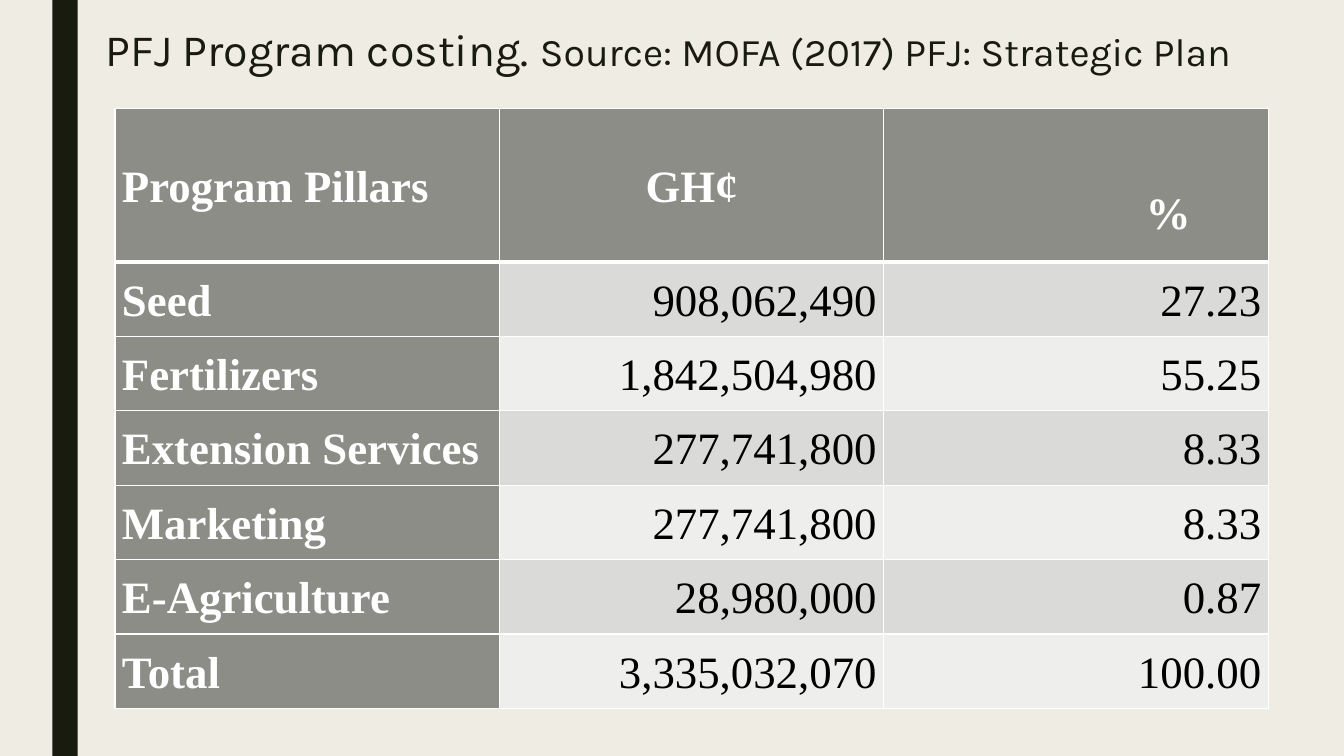
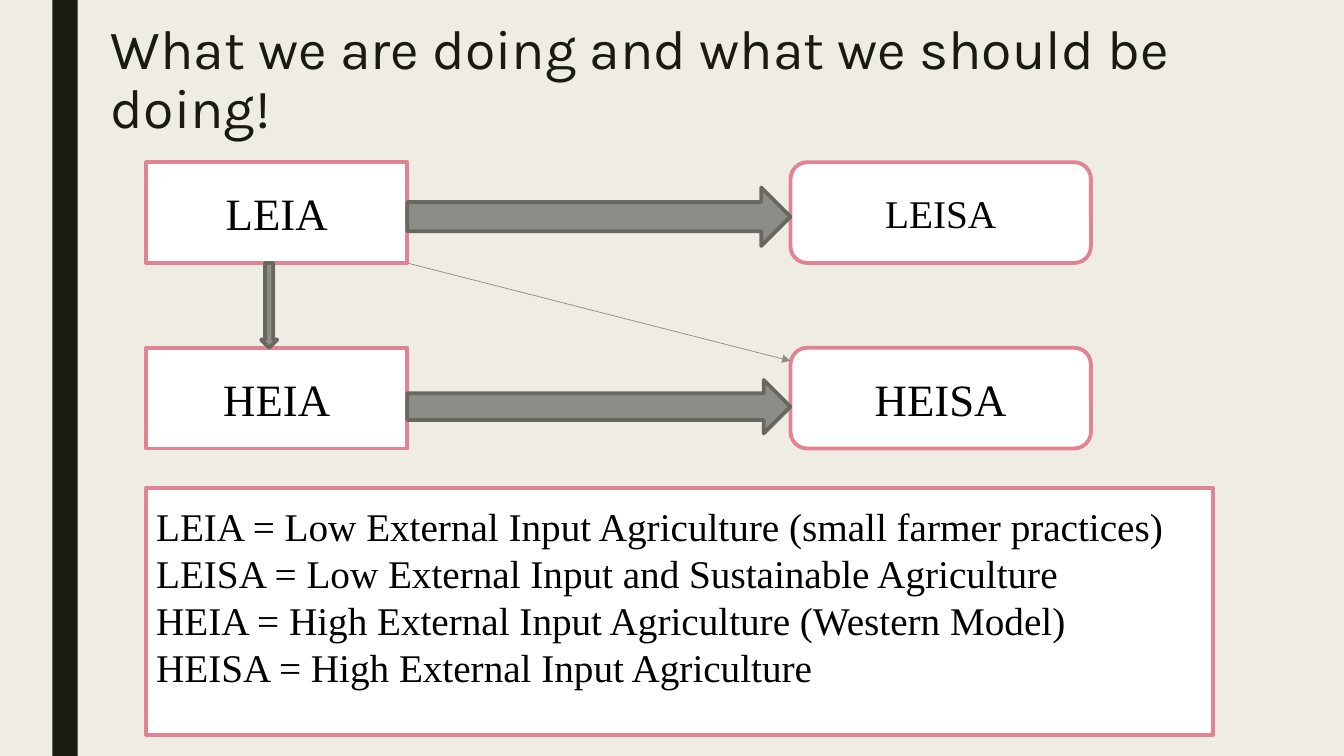
from lxml import etree
from pptx import Presentation
from pptx.dml.color import RGBColor
from pptx.enum.shapes import MSO_CONNECTOR, MSO_SHAPE
from pptx.enum.text import MSO_ANCHOR, MSO_AUTO_SIZE, PP_ALIGN
from pptx.oxml.ns import qn
from pptx.util import Inches, Pt

COLORS = {
    "background": "EFEDE3", "dark": "191B0E", "gray": "8C8D86",
    "gray_edge": "686863", "band_dark": "DADBD9", "band_light": "EEEEED",
    "pink": "E28394", "white": "FFFFFF", "black": "000000",
}
TITLE_FONT, BODY_FONT = "Karla", "Times New Roman"
TITLE_ONLY = 5

COSTING = [
    ("Program Pillars", "GH¢", "%"),
    ("Seed", "908,062,490", "27.23"),
    ("Fertilizers", "1,842,504,980", "55.25"),
    ("Extension Services", "277,741,800", "8.33"),
    ("Marketing", "277,741,800", "8.33"),
    ("E-Agriculture", "28,980,000", "0.87"),
    ("Total", "3,335,032,070", "100.00"),
]
LEGEND = [
    "LEIA = Low External Input Agriculture (small farmer practices)",
    "LEISA = Low External Input and Sustainable Agriculture",
    "HEIA = High External Input Agriculture (Western Model)",
    "HEISA = High External Input Agriculture",
]


def rgb(name):
    return RGBColor.from_string(COLORS[name])


def add_run(paragraph, text, size, color="black", font=BODY_FONT, bold=False):
    run = paragraph.add_run()
    run.text = text
    run.font.name, run.font.size, run.font.bold = font, Pt(size), bold
    run.font.color.rgb = rgb(color)


def add_block(slide, kind, box, fill, line=None):
    block = slide.shapes.add_shape(kind, *map(Inches, box))
    block.shadow.inherit = False
    block.fill.solid()
    block.fill.fore_color.rgb = rgb(fill)
    if line:
        block.line.color.rgb = rgb(line)
        block.line.width = Pt(2.75)
    else:
        block.line.fill.background()
    return block


def style_master(prs, slide):
    """Give the master its background and the dark side band."""
    master = prs.slide_master
    master.background.fill.solid()
    master.background.fill.fore_color.rgb = rgb("background")
    band = add_block(slide, MSO_SHAPE.RECTANGLE, (0.52, 0, 0.25, 7.5), "dark")
    master.shapes.element.insert(2, band.element)


def set_title(slide, box, runs):
    title = slide.shapes.title
    title.left, title.top, title.width, title.height = map(Inches, box)
    frame = title.text_frame
    frame.word_wrap = True
    frame.auto_size = MSO_AUTO_SIZE.NONE
    frame.vertical_anchor = MSO_ANCHOR.TOP
    paragraph = frame.paragraphs[0]
    paragraph.alignment = PP_ALIGN.LEFT
    paragraph.line_spacing = 0.89
    for text, size in runs:
        add_run(paragraph, text, size, "dark", TITLE_FONT)


# Costing table
def set_borders(cell, top, bottom):
    widths = {"a:lnL": 1, "a:lnR": 1, "a:lnT": top, "a:lnB": bottom}
    properties = cell._tc.get_or_add_tcPr()
    for position, (side, width) in enumerate(widths.items()):
        line = etree.Element(qn(side), w=str(Pt(width)))
        fill = etree.SubElement(line, qn("a:solidFill"))
        etree.SubElement(fill, qn("a:srgbClr"), val=COLORS["white"])
        properties.insert(position, line)


def fill_cell(cell, text, row, column):
    header, label = row == 0, row == 0 or column == 0
    band = "band_dark" if row % 2 else "band_light"
    cell.fill.solid()
    cell.fill.fore_color.rgb = rgb("gray" if label else band)
    cell.vertical_anchor = MSO_ANCHOR.MIDDLE
    cell.margin_left = cell.margin_right = Inches(0.07)
    cell.margin_top = cell.margin_bottom = 0
    paragraph = cell.text_frame.paragraphs[0]
    paragraph.line_spacing = 1.07
    if column == 0:
        paragraph.alignment = PP_ALIGN.LEFT
    elif header and column == 1:
        paragraph.alignment = PP_ALIGN.CENTER
    else:
        paragraph.alignment = PP_ALIGN.RIGHT
    if header and column == 2:  # the percent sign sits low, in from the edge
        cell.margin_right, cell.margin_top = Inches(0.77), Inches(0.54)
    add_run(paragraph, text, 32, "white" if label else "black", bold=label)
    set_borders(cell, top=3 if row == 1 else 1, bottom=3 if header else 1)


def add_costing_table(slide, box, header_height=1.52):
    left, top, width, height = box
    row_count, column_count = len(COSTING), len(COSTING[0])
    table = slide.shapes.add_table(
        row_count, column_count, *map(Inches, box)).table
    for column in table.columns:
        column.width = Inches(width / column_count)
    body_height = (height - header_height) / (row_count - 1)
    for index, values in enumerate(COSTING):
        table.rows[index].height = Inches(body_height if index else header_height)
        for column, text in enumerate(values):
            fill_cell(table.cell(index, column), text, index, column)


# Farming system diagram
def add_system(slide, kind, box, text, size):
    system = add_block(slide, kind, box, "white", "pink")
    frame = system.text_frame
    frame.word_wrap = True
    frame.vertical_anchor = MSO_ANCHOR.MIDDLE
    frame.paragraphs[0].alignment = PP_ALIGN.CENTER
    add_run(frame.paragraphs[0], text, size)


def add_thin_arrow(slide, start, end):
    arrow = slide.shapes.add_connector(
        MSO_CONNECTOR.STRAIGHT, *map(Inches, start + end))
    arrow.line.color.rgb = rgb("gray")
    arrow.line.width = Pt(0.5)
    etree.SubElement(arrow.line._get_or_add_ln(), qn("a:tailEnd"), type="triangle")
    etree.SubElement(arrow.element.spPr, qn("a:effectLst"))


def add_systems_diagram(slide, box):
    left, top, width, height = box
    system_height, current_width, goal_width = 1, 2.59, 2.98
    current_right = left + current_width
    goal_left = left + width - goal_width
    lower_top = top + height - system_height
    upper_bottom = top + system_height

    rows = [(top, ("LEIA", 32), ("LEISA", 28)),
            (lower_top, ("HEIA", 32), ("HEISA", 32))]
    for row_top, current, goal in rows:
        add_system(slide, MSO_SHAPE.RECTANGLE,
                   (left, row_top, current_width, system_height), *current)
        add_system(slide, MSO_SHAPE.ROUNDED_RECTANGLE,
                   (goal_left, row_top, goal_width, system_height), *goal)

    # Block arrows between the systems
    gap = goal_left - current_right
    arrows = [
        (MSO_SHAPE.RIGHT_ARROW, (current_right, top + 0.25, gap, 0.58)),
        (MSO_SHAPE.RIGHT_ARROW, (current_right, lower_top + 0.32, gap, 0.53)),
        (MSO_SHAPE.DOWN_ARROW,
         (left + 1.14, upper_bottom, 0.16, lower_top - upper_bottom)),
    ]
    for kind, arrow_box in arrows:
        add_block(slide, kind, arrow_box, "gray", "gray_edge")
    add_thin_arrow(slide, (current_right, upper_bottom),
                   (goal_left, lower_top + 0.13))


def add_legend(slide, box):
    legend = add_block(slide, MSO_SHAPE.RECTANGLE, box, "white", "pink")
    frame = legend.text_frame
    frame.word_wrap = True
    frame.vertical_anchor = MSO_ANCHOR.MIDDLE
    frame.margin_bottom = Inches(0.34)
    for index, text in enumerate(LEGEND):
        paragraph = frame.add_paragraph() if index else frame.paragraphs[0]
        paragraph.alignment = PP_ALIGN.LEFT
        add_run(paragraph, text, 28)


# Slides
def build_costing_slide(slide):
    set_title(slide, (0.95, 0.23, 12.14, 0.59), [
        ("PFJ Program costing. ", 32),
        ("Source: MOFA (2017) PFJ: Strategic Plan", 28)])
    add_costing_table(slide, (1.14, 1.08, 11.44, 5.95))


def build_systems_slide(slide):
    set_title(slide, (1, 0.17, 11.88, 0.84), [
        ("What we are doing and what we should be doing!", 39.6)])
    add_systems_diagram(slide, (1.45, 1.61, 9.37, 2.84))
    add_legend(slide, (1.45, 4.84, 10.58, 2.45))


def main():
    prs = Presentation()
    prs.slide_width, prs.slide_height = Inches(13.33), Inches(7.5)
    layout = prs.slide_layouts[TITLE_ONLY]
    costing, systems = (prs.slides.add_slide(layout) for _ in range(2))
    style_master(prs, costing)
    build_costing_slide(costing)
    build_systems_slide(systems)
    prs.save("out.pptx")


if __name__ == "__main__":
    main()
